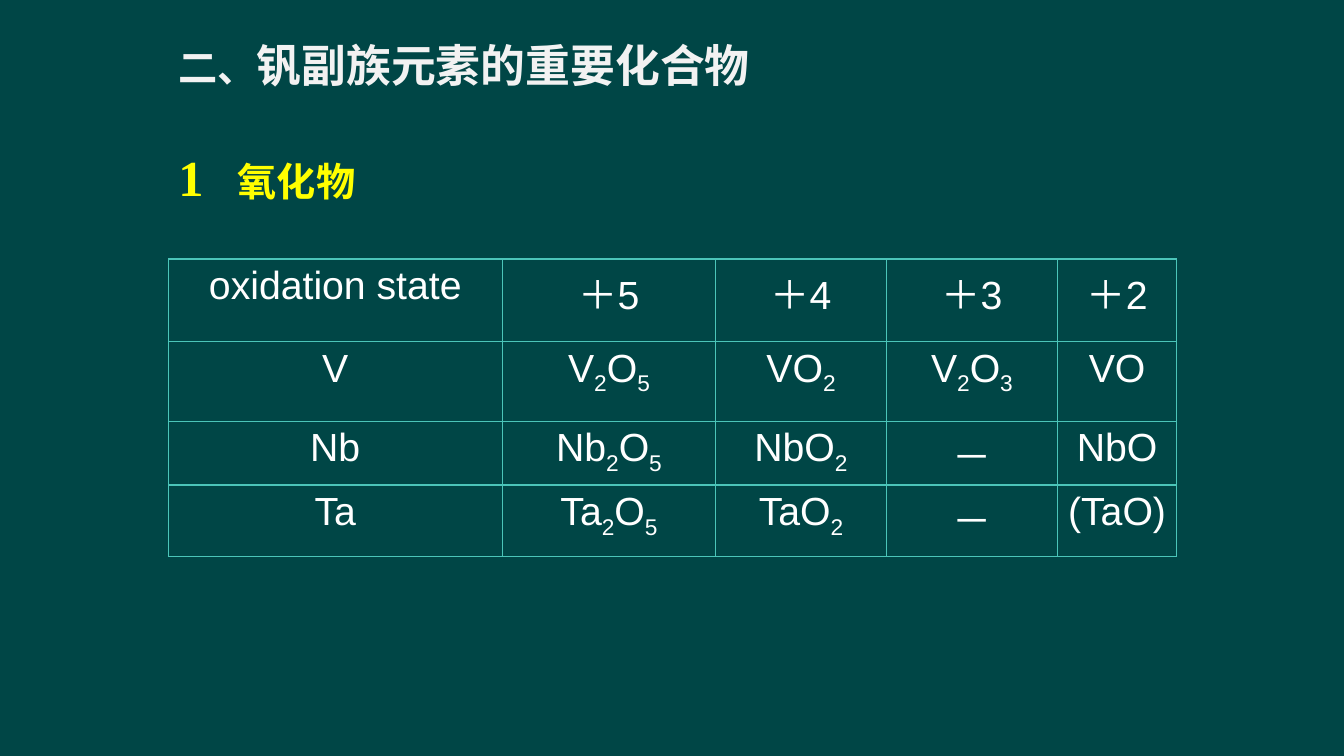
"""Build a slide on the oxides of the vanadium subgroup."""
from itertools import groupby

from lxml import etree
from pptx import Presentation
from pptx import util as u
from pptx.dml.color import RGBColor
from pptx.enum import text
from pptx.oxml import ns

COLORS = {"background": "004646", "title": "F2F2F2", "heading": "FFFF00",
          "body": "FFFFFF", "border": "4BC5B9"}
CJK, LATIN, SERIF = "Noto Sans CJK SC", "Arial", "Times New Roman"
LEFT, WIDTH = 1.67, 10
HEADING_TAB = 0.59
HEADINGS = [
    (0.33, 0.63, "title", [("二、", 28, CJK), ("钒副族元素的重要化合物", 32, CJK)]),
    (1.4, 0.7, "heading", [("1\t", 36, SERIF), ("氧化物", 28, CJK)]),
]
TABLE_TOP = 2.57
COLUMN_WIDTHS = [3.31, 2.12, 1.69, 1.7, 1.18]
ROW_HEIGHTS = [0.82, 0.79, 0.63, 0.71]
OXIDES = [
    ["oxidation state", "＋5", "＋4", "＋3", "＋2"],
    ["V", "V2O5", "VO2", "V2O3", "VO"],
    ["Nb", "Nb2O5", "NbO2", "－", "NbO"],
    ["Ta", "Ta2O5", "TaO2", "－", "(TaO)"],
]


def add_element(parent, tag, **attributes):
    return etree.SubElement(parent, ns.qn(tag), attributes)


def add_span(para, words, size, face, color, bold=False):
    span = para.add_run()
    span.text = words
    for name, value in {"size": u.Pt(size), "name": face, "bold": bold}.items():
        setattr(span.font, name, value)
    span.font.color.rgb = RGBColor.from_string(COLORS[color])
    add_element(span.font._element, "a:ea", typeface=CJK)
    return span


def add_heading(page, top, height, color, spans):
    box = page.shapes.add_textbox(*map(u.Inches, (LEFT, top, WIDTH, height)))
    frame = box.text_frame
    frame.word_wrap = True
    frame.vertical_anchor = text.MSO_ANCHOR.MIDDLE
    para = frame.paragraphs[0]
    tabs = add_element(para._p.get_or_add_pPr(), "a:tabLst")
    add_element(tabs, "a:tab", pos=str(u.Inches(HEADING_TAB)), algn="l")
    for words, size, face in spans:
        add_span(para, words, size, face, color, bold=True)


def add_borders(cell):
    properties = cell._tc.get_or_add_tcPr()
    for index, side in enumerate(("a:lnL", "a:lnR", "a:lnT", "a:lnB")):
        line = etree.Element(ns.qn(side), w=str(u.Pt(1)))
        fill = add_element(line, "a:solidFill")
        add_element(fill, "a:srgbClr", val=COLORS["border"])
        properties.insert(index, line)


def fill_cell(cell, formula):
    cell.fill.background()
    add_borders(cell)
    para = cell.text_frame.paragraphs[0]
    para.alignment = text.PP_ALIGN.CENTER
    if formula.startswith("＋"):
        add_span(para, formula, 28, LATIN, "body")
        return
    for is_digit, letters in groupby(formula, str.isdigit):
        span = add_span(para, "".join(letters), 28, LATIN, "body")
        if is_digit:
            span.font._element.set("baseline", "-25000")


def add_oxide_table(page):
    size = (LEFT, TABLE_TOP, sum(COLUMN_WIDTHS), sum(ROW_HEIGHTS))
    table = page.shapes.add_table(
        len(ROW_HEIGHTS), len(COLUMN_WIDTHS), *map(u.Inches, size)).table
    table.first_row = table.horz_banding = False
    for column, width in zip(table.columns, COLUMN_WIDTHS):
        column.width = u.Inches(width)
    for row, height, formulas in zip(table.rows, ROW_HEIGHTS, OXIDES):
        row.height = u.Inches(height)
        for cell, formula in zip(row.cells, formulas):
            fill_cell(cell, formula)


def main():
    deck = Presentation()
    deck.slide_width, deck.slide_height = u.Inches(13.33), u.Inches(7.5)
    page = deck.slides.add_slide(deck.slide_layouts[6])
    page.background.fill.solid()
    page.background.fill.fore_color.rgb = RGBColor.from_string(COLORS["background"])
    for heading in HEADINGS:
        add_heading(page, *heading)
    add_oxide_table(page)
    deck.save("out.pptx")


if __name__ == "__main__":
    main()
